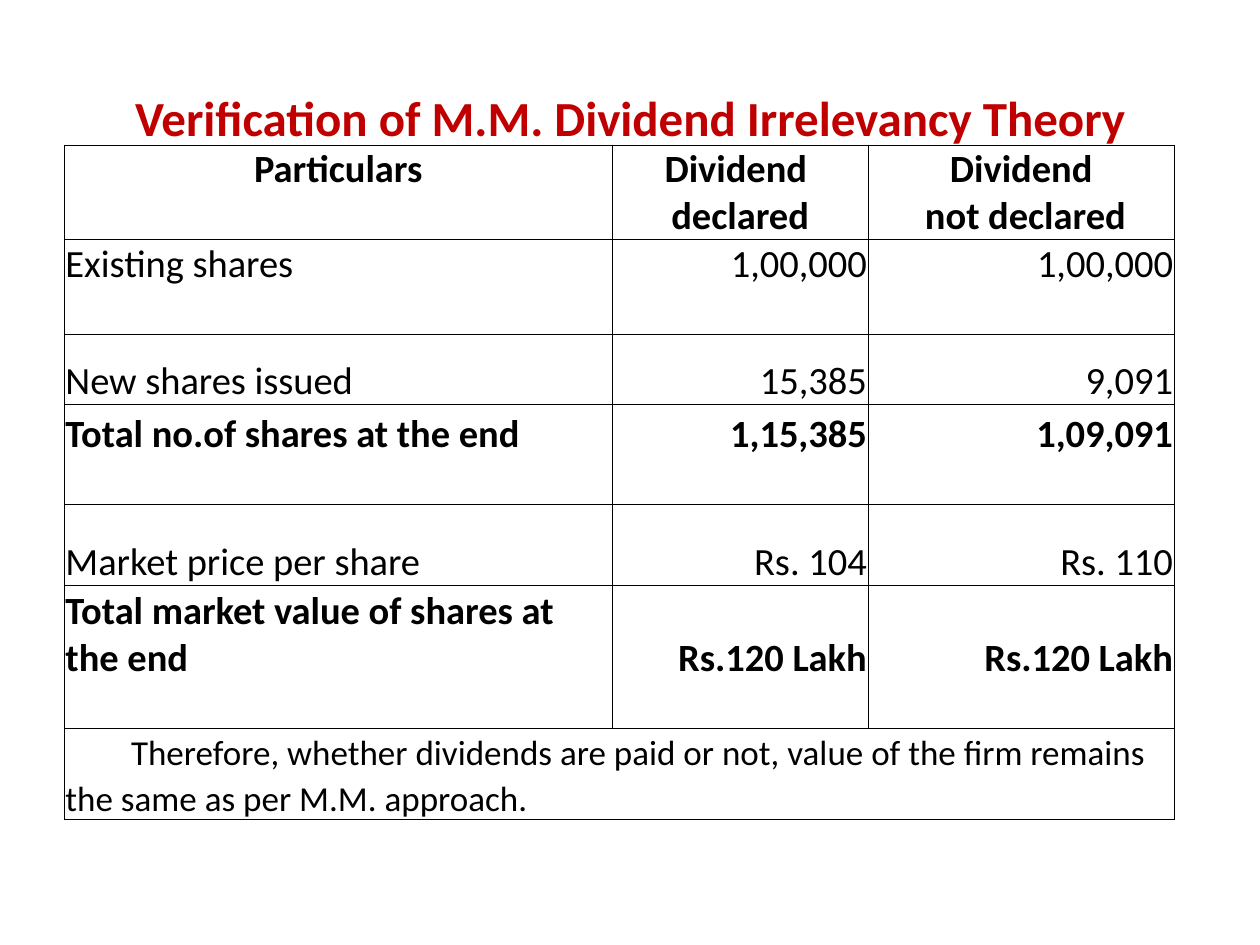
from lxml.etree import SubElement
from pptx import Presentation
from pptx.dml.color import RGBColor
from pptx.enum.text import MSO_ANCHOR, PP_ALIGN
from pptx.oxml.ns import qn
from pptx.util import Inches, Pt

COLORS = {"title": "C00000", "text": "000000", "line": "000000"}
WIDTHS = [4.35, 2.03, 2.43]
HEIGHTS = [0.75, 0.75, 0.56, 0.79, 0.65, 1.13, 0.72]
ROWS = [
    ["Particulars", "Dividend \ndeclared", "Dividend\n not declared"],
    ["Existing shares", "1,00,000", "1,00,000"],
    ["New shares issued", "15,385", "9,091"],
    ["Total no.of shares at the end", "1,15,385", "1,09,091"],
    ["Market price per share", "Rs. 104", "Rs. 110"],
    ["Total market value of shares at the end", "Rs.120 Lakh", "Rs.120 Lakh"],
]
NOTE = ("Therefore, whether dividends are paid or not, value of the firm "
        "remains the same as per M.M. approach.")
BOLD = {0, 3, 5}
LIFTED = {1, 3, 5}  # rows whose text sits one line above the bottom
LINE = 0.37


class Deck:
    font = "Calibri"

    def __init__(self, slide):
        self.slide = slide

    def add_text(self, frame, text, size, color="text", bold=False,
                 align=PP_ALIGN.LEFT):
        for i, line in enumerate(text.split("\n")):
            para = frame.add_paragraph() if i else frame.paragraphs[0]
            para.alignment = align
            run = para.add_run()
            run.text = line
            font = run.font
            font.name, font.size, font.bold = self.font, Pt(size), bold
            font.color.rgb = RGBColor.from_string(COLORS[color])

    def title(self, text, left, top, width, height):
        box = self.slide.shapes.add_textbox(
            Inches(left), Inches(top), Inches(width), Inches(height))
        frame = box.text_frame
        frame.word_wrap = True
        frame.vertical_anchor = MSO_ANCHOR.MIDDLE
        self.add_text(frame, text, 28, "title", True, PP_ALIGN.CENTER)

    def table(self, left, top, widths, heights):
        table = self.slide.shapes.add_table(
            len(heights), len(widths), Inches(left), Inches(top),
            Inches(sum(widths)), Inches(sum(heights))).table
        table.first_row = table.horz_banding = False
        for col, width in zip(table.columns, widths):
            col.width = Inches(width)
        for row, height in zip(table.rows, heights):
            row.height = Inches(height)
        for cell in table.iter_cells():
            self.style(cell)
        return table

    def style(self, cell):
        cell.fill.background()
        cell.vertical_anchor = MSO_ANCHOR.BOTTOM
        cell.margin_left = cell.margin_right = cell.margin_top = Inches(0.01)
        cell.margin_bottom = 0
        props = cell._tc.get_or_add_tcPr()
        for i, side in enumerate(["lnL", "lnR", "lnT", "lnB"]):
            line = SubElement(props, qn(f"a:{side}"), w=str(Pt(0.5)))
            fill = SubElement(line, qn("a:solidFill"))
            SubElement(fill, qn("a:srgbClr"), val=COLORS["line"])
            props.insert(i, line)  # borders come before the fill


def main():
    prs = Presentation()
    prs.slide_width, prs.slide_height = Inches(10), Inches(7.5)
    deck = Deck(prs.slides.add_slide(prs.slide_layouts[6]))

    # Title
    deck.title("Verification of M.M. Dividend Irrelevancy Theory",
               0.5, 0.3, 9, 1.25)

    # Comparison table
    table = deck.table(0.51, 1.15, WIDTHS, HEIGHTS)
    for r, row in enumerate(ROWS):
        for c, text in enumerate(row):
            cell = table.cell(r, c)
            if r == 0:
                align = PP_ALIGN.CENTER
            else:
                align = PP_ALIGN.RIGHT if c else PP_ALIGN.LEFT
            if r in LIFTED or r == c == 0:
                cell.margin_bottom = Inches(LINE)
            deck.add_text(cell.text_frame, text, 22, bold=r in BOLD,
                          align=align)

    # Conclusion across the last row
    last = len(ROWS)
    cell = table.cell(last, 0)
    cell.merge(table.cell(last, len(WIDTHS) - 1))
    deck.add_text(cell.text_frame, NOTE, 20)
    para = cell.text_frame.paragraphs[0]
    para.line_spacing = 1.07
    para._p.get_or_add_pPr().set("indent", str(Inches(0.52)))

    prs.save("out.pptx")


if __name__ == "__main__":
    main()
